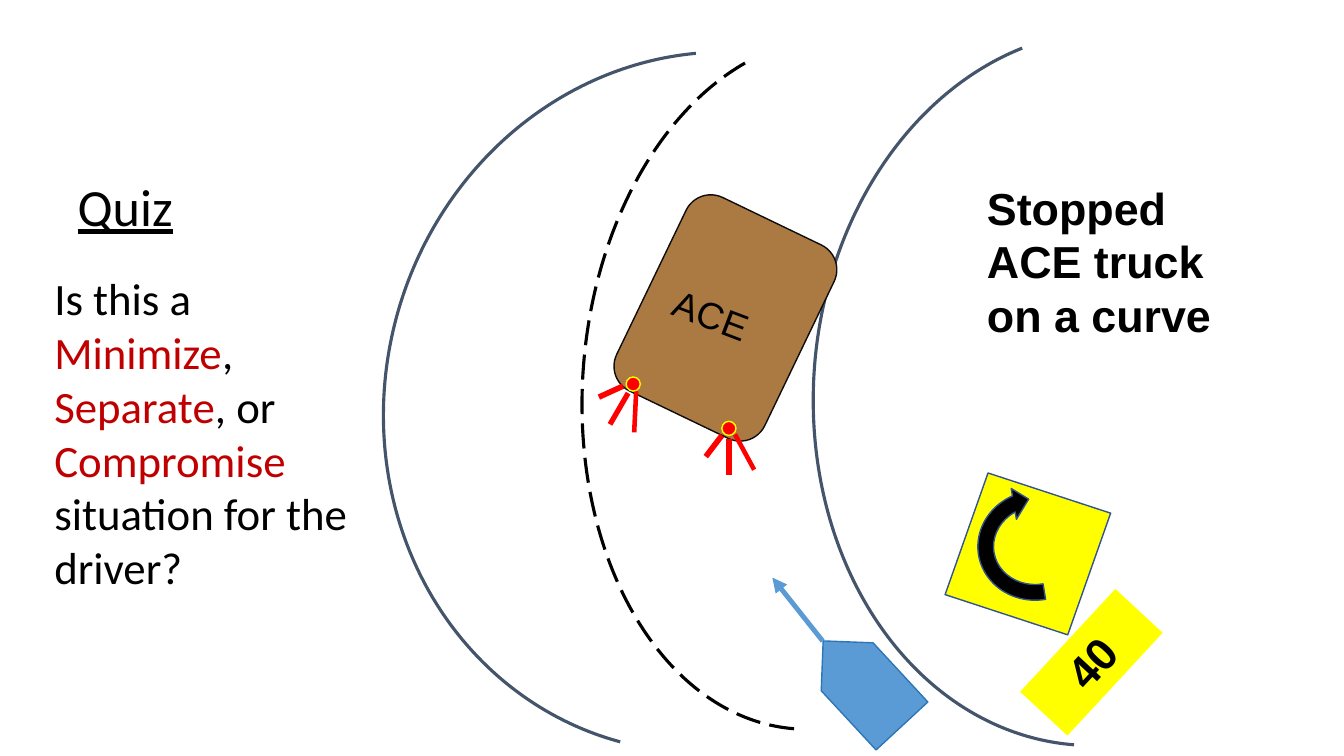
from lxml import etree
from pptx import Presentation
from pptx.dml.color import RGBColor
from pptx.enum.dml import MSO_LINE
from pptx.enum.shapes import MSO_CONNECTOR, MSO_SHAPE
from pptx.enum.text import MSO_ANCHOR, MSO_AUTO_SIZE, PP_ALIGN
from pptx.oxml.ns import qn
from pptx.util import Inches, Pt

BLACK = RGBColor(0x00, 0x00, 0x00)
NEAR_BLACK = RGBColor(0x0D, 0x0D, 0x0D)
DARK_RED = RGBColor(0xC0, 0x00, 0x00)
RED = RGBColor(0xFF, 0x00, 0x00)
YELLOW = RGBColor(0xFF, 0xFF, 0x00)
SLATE = RGBColor(0x44, 0x54, 0x6A)
BROWN = RGBColor(0xAB, 0x79, 0x42)
NAVY = RGBColor(0x32, 0x54, 0x91)
BLUE = RGBColor(0x5B, 0x9B, 0xD5)
BLUE_EDGE = RGBColor(0x2E, 0x75, 0xB6)

ARC = MSO_SHAPE.ARC
ROUNDED = MSO_SHAPE.ROUNDED_RECTANGLE
DIAMOND = MSO_SHAPE.DIAMOND
CURVED_ARROW = MSO_SHAPE.CIRCULAR_ARROW
PENTAGON = MSO_SHAPE.PENTAGON
OVAL = MSO_SHAPE.OVAL
STRAIGHT = MSO_CONNECTOR.STRAIGHT
LONG_DASH = MSO_LINE.LONG_DASH
LEFT, CENTER = PP_ALIGN.LEFT, PP_ALIGN.CENTER
TOP = MSO_ANCHOR.TOP
NO_AUTOFIT = MSO_AUTO_SIZE.NONE

QUIZ_TITLE = ("Quiz", (0.67, 1.75, 1.44, 0.89))
QUESTION = [
    ("Is this a ", BLACK), ("Minimize", DARK_RED), (", ", BLACK),
    ("Separate", DARK_RED), (", or ", BLACK), ("Compromise", DARK_RED),
    (" situation for the driver?", BLACK),
]
QUESTION_BOX = (0.44, 2.64, 3.12, 3.33)
SCENE = [("Stopped ACE truck on a curve", BLACK)]
SCENE_BOX = (9.69, 1.74, 2.88, 1.72)
TRUCK_NAME = [("ACE", BLACK)]
TRUCK_NAME_BOX = (6.56, 2.91, 1.32, 0.55)
SPEED = [("40", BLACK)]
SPEED_BOX = (10.13, 6.25, 1.39, 0.64)

ROAD_ARC_ANGLES = (162, 43.37)
ROAD_LINES = [
    ((3.82, 0.5, 6.48, 6.98), 195.1, SLATE, None),
    ((8.07, 0.3, 5.72, 7.1), 184.5, SLATE, None),
    ((5.78, 0.37, 4.73, 6.87), 184.5, BLACK, LONG_DASH),
]
TRUCK_BODY = (ROUNDED, (6.38, 2.09, 1.63, 2.13), 25.7, BROWN, NEAR_BLACK)
SIGNS_AND_CAR = [
    (DIAMOND, (9.28, 4.6, 1.83, 1.79), 333.8, YELLOW, NAVY),
    (CURVED_ARROW, (9.66, 4.75, 1.24, 1.32), 260.4, BLACK, NAVY),
    (PENTAGON, (7.98, 6.43, 1.15, 0.7), 227.2, BLUE, BLUE_EDGE),
]
CAR_HEADING = ((8.16, 6.36), (7.66, 5.73))
LIGHT_SIZE = 0.14
TAIL_LIGHTS = [
    ((7.16, 4.18), 0, [
        ((7.48, 4.66), (7.29, 4.31), 3.25),
        ((7.16, 4.32), (7, 4.53), 4),
        ((7.23, 4.36), (7.23, 4.71), 3.75),
    ]),
    ((6.21, 3.74), 29.8, [
        ((6.29, 4.29), (6.31, 3.88), 3.25),
        ((6.18, 3.83), (5.94, 3.94), 4),
        ((6.23, 3.9), (6.05, 4.21), 3.75),
    ]),
]


def to_inches(values):
    """Convert plain numbers to lengths."""
    return [Inches(value) for value in values]


def add_shape(slide, kind, box, rotation, fill, line, width=1):
    """Add a rotated preset shape, unfilled when fill is None."""
    shape = slide.shapes.add_shape(kind, *to_inches(box))
    shape.rotation = rotation
    shape.shadow.inherit = False
    if fill is None:
        shape.fill.background()
    else:
        shape.fill.solid()
        shape.fill.fore_color.rgb = fill
    shape.line.color.rgb = line
    shape.line.width = Pt(width)
    return shape


def add_line(slide, start, end, color, width):
    """Add a straight line without a shadow."""
    line = slide.shapes.add_connector(STRAIGHT, *to_inches(start + end))
    line.line.color.rgb = color
    line.line.width = Pt(width)
    etree.SubElement(line._element.spPr, qn("a:effectLst"))
    return line


def add_label(slide, parts, box, font, size, bold=False, rotation=0, fill=None, align=LEFT):
    """Add a wrapped text box made of coloured runs."""
    label = slide.shapes.add_textbox(*to_inches(box))
    label.rotation = rotation
    if fill is not None:
        label.fill.solid()
        label.fill.fore_color.rgb = fill
    label.text_frame.word_wrap = True
    paragraph = label.text_frame.paragraphs[0]
    paragraph.alignment = align
    for text, color in parts:
        run = paragraph.add_run()
        run.text = text
        run.font.name = font
        run.font.size = Pt(size)
        run.font.bold = bold
        run.font.color.rgb = color


def add_title(slide, text, box):
    """Place the underlined heading in the title placeholder."""
    title = slide.shapes.title
    title.left, title.top, title.width, title.height = to_inches(box)
    frame = title.text_frame
    frame.text = text
    frame.word_wrap = True
    frame.auto_size = NO_AUTOFIT
    frame.vertical_anchor = TOP
    paragraph = frame.paragraphs[0]
    paragraph.alignment = LEFT
    paragraph.line_spacing = 0.9
    font = paragraph.runs[0].font
    font.name = "Calibri"
    font.size = Pt(37.3)
    font.underline = True
    font.color.rgb = BLACK


def main():
    """Build the road quiz slide."""
    presentation = Presentation()
    presentation.slide_width = Inches(13.33)
    presentation.slide_height = Inches(7.5)
    slide = presentation.slides.add_slide(presentation.slide_layouts[5])

    add_title(slide, *QUIZ_TITLE)
    add_label(slide, QUESTION, QUESTION_BOX, "Calibri", 32)

    for box, rotation, color, dash in ROAD_LINES:
        road_line = add_shape(slide, ARC, box, rotation, None, color, 2.25)
        for index, angle in enumerate(ROAD_ARC_ANGLES):
            road_line.adjustments[index] = angle
        if dash is not None:
            road_line.line.dash_style = dash

    add_shape(slide, *TRUCK_BODY)
    add_label(slide, TRUCK_NAME, TRUCK_NAME_BOX, "Arial", 26.7, rotation=20.7, fill=BROWN)
    for item in SIGNS_AND_CAR:
        add_shape(slide, *item)
    add_label(slide, SPEED, SPEED_BOX, "Arial", 32, True, 312.8, YELLOW, CENTER)

    heading = add_line(slide, *CAR_HEADING, BLUE, 3.5)
    etree.SubElement(heading.line._get_or_add_ln(), qn("a:tailEnd"), type="triangle")
    add_label(slide, SCENE, SCENE_BOX, "Arial", 32, bold=True)

    for corner, rotation, rays in TAIL_LIGHTS:
        for start, end, width in rays:
            add_line(slide, start, end, RED, width)
        add_shape(slide, OVAL, corner + (LIGHT_SIZE, LIGHT_SIZE), rotation, RED, YELLOW)

    presentation.save("out.pptx")


if __name__ == "__main__":
    main()
